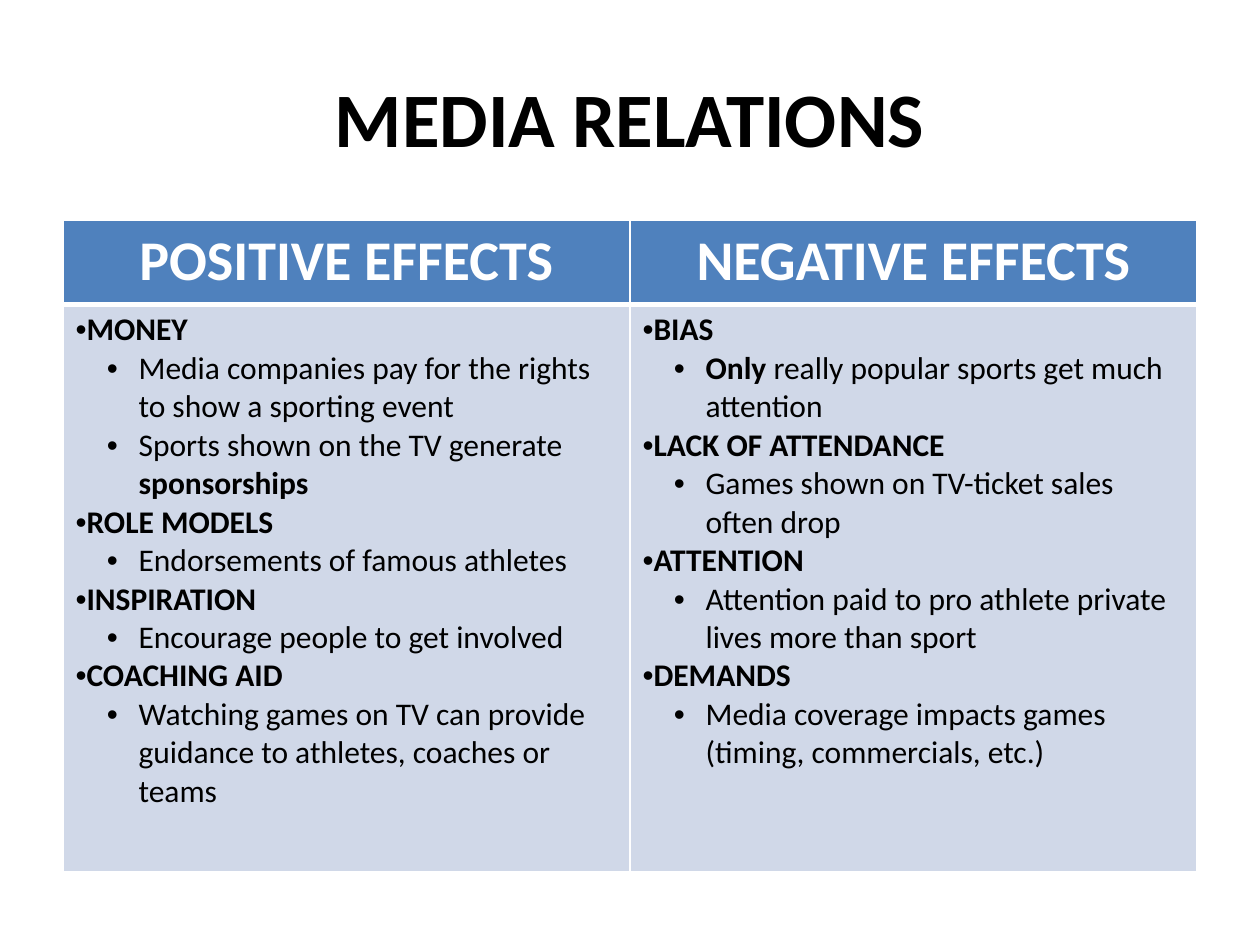
"""Build the media relations slide with its table of positive and negative effects."""
from dataclasses import dataclass

import pptx
import pptx.dml.color
import pptx.enum.text
import pptx.oxml
import pptx.oxml.ns
import pptx.util

Cm = pptx.util.Cm
Pt = pptx.util.Pt
PP_ALIGN = pptx.enum.text.PP_ALIGN
FONT = "Calibri"
COLORS = {"text": "000000", "white": "FFFFFF", "header": "4F81BD", "body": "D0D8E8"}


@dataclass
class Run:
    text: str
    bold: bool = False


@dataclass
class Topic:
    name: str
    points: list[list[Run]]


@dataclass
class Column:
    heading: str
    topics: list[Topic]


COLUMNS = [
    Column("POSITIVE EFFECTS", [
        Topic("MONEY", [
            [Run("Media companies pay for the rights to show a sporting event")],
            [Run("Sports shown on the TV generate "), Run("sponsorships", True)],
        ]),
        Topic("ROLE MODELS", [[Run("Endorsements of famous athletes")]]),
        Topic("INSPIRATION", [[Run("Encourage people to get involved")]]),
        Topic("COACHING AID", [
            [Run("Watching games on TV can provide guidance to athletes, coaches or teams")],
        ]),
    ]),
    Column("NEGATIVE EFFECTS", [
        Topic("BIAS", [
            [Run("Only ", True), Run("really popular sports get much attention")],
        ]),
        Topic("LACK OF ATTENDANCE", [[Run("Games shown on TV-ticket sales often drop")]]),
        Topic("ATTENTION", [
            [Run("Attention paid to pro athlete private lives more than sport")],
        ]),
        Topic("DEMANDS", [
            [Run("Media coverage impacts games (timing, commercials, etc.)")],
        ]),
    ]),
]


def rgb(name: str) -> pptx.dml.color.RGBColor:
    """Return the named colour."""
    return pptx.dml.color.RGBColor.from_string(COLORS[name])


def add_run(p, run: Run, size: int, color: str) -> None:
    """Append a formatted run to a paragraph."""
    r = p.add_run()
    r.text = run.text
    r.font.name = FONT
    r.font.size = Pt(size)
    r.font.bold = run.bold
    r.font.color.rgb = rgb(color)


def add_heading(tf, text: str, size: int, color: str) -> None:
    """Write a centred bold line."""
    p = tf.paragraphs[0]
    p.alignment = PP_ALIGN.CENTER
    add_run(p, Run(text, True), size, color)


def set_bullet(p, level: int) -> None:
    """Give a paragraph a bullet, hanging below the top level."""
    p.level = level
    p.alignment = PP_ALIGN.LEFT
    pPr = p._p.get_or_add_pPr()
    pPr.set("marL", str(Cm(1.27 * level)))
    pPr.set("indent", str(-Cm(0.64 * level)))
    ns = pptx.oxml.ns.nsdecls("a")
    pPr.append(pptx.oxml.parse_xml(f'<a:buFont {ns} typeface="Arial"/>'))
    pPr.append(pptx.oxml.parse_xml(f'<a:buChar {ns} char="•"/>'))


def add_topics(tf, topics: list[Topic]) -> None:
    """Write each topic in bold with its points below."""
    lines = []
    for topic in topics:
        lines.append((0, [Run(topic.name, True)]))
        lines += [(1, point) for point in topic.points]
    for i, (level, runs) in enumerate(lines):
        p = tf.add_paragraph() if i else tf.paragraphs[0]
        set_bullet(p, level)
        for run in runs:
            add_run(p, run, 18, "text")


def style_cell(cell, fill: str, top: int, bottom: int) -> None:
    """Fill a cell and draw its white borders."""
    cell.fill.solid()
    cell.fill.fore_color.rgb = rgb(fill)
    tcPr = cell._tc.get_or_add_tcPr()
    widths = {"lnL": 1, "lnR": 1, "lnT": top, "lnB": bottom}
    for i, (tag, width) in enumerate(widths.items()):
        tcPr.insert(i, pptx.oxml.parse_xml(
            f'<a:{tag} {pptx.oxml.ns.nsdecls("a")} w="{Pt(width)}"><a:solidFill>'
            f'<a:srgbClr val="{COLORS["white"]}"/></a:solidFill></a:{tag}>'))


def add_title(s, text: str) -> None:
    """Add the slide title."""
    tf = s.shapes.add_textbox(Cm(1.27), Cm(0.76), Cm(22.86), Cm(3.18)).text_frame
    tf.word_wrap = True
    tf.vertical_anchor = pptx.enum.text.MSO_ANCHOR.MIDDLE
    add_heading(tf, text, 44, "text")


def add_effects(s, columns: list[Column]) -> None:
    """Add the table of effects."""
    table = s.shapes.add_table(
        2, len(columns), Cm(1.27), Cm(4.45), Cm(22.86), Cm(13.12)).table
    for row, height in zip(table.rows, (1.69, 11.43)):
        row.height = Cm(height)
    for i, column in enumerate(columns):
        header, body = table.cell(0, i), table.cell(1, i)
        style_cell(header, "header", 1, 3)
        style_cell(body, "body", 3, 1)
        add_heading(header.text_frame, column.heading, 32, "white")
        add_topics(body.text_frame, column.topics)


def main() -> None:
    """Build and save the presentation."""
    prs = pptx.Presentation()
    prs.slide_width, prs.slide_height = Cm(25.4), Cm(19.05)
    s = prs.slides.add_slide(prs.slide_layouts[6])
    add_title(s, "MEDIA RELATIONS")
    add_effects(s, COLUMNS)
    prs.save("out.pptx")


if __name__ == "__main__":
    main()
